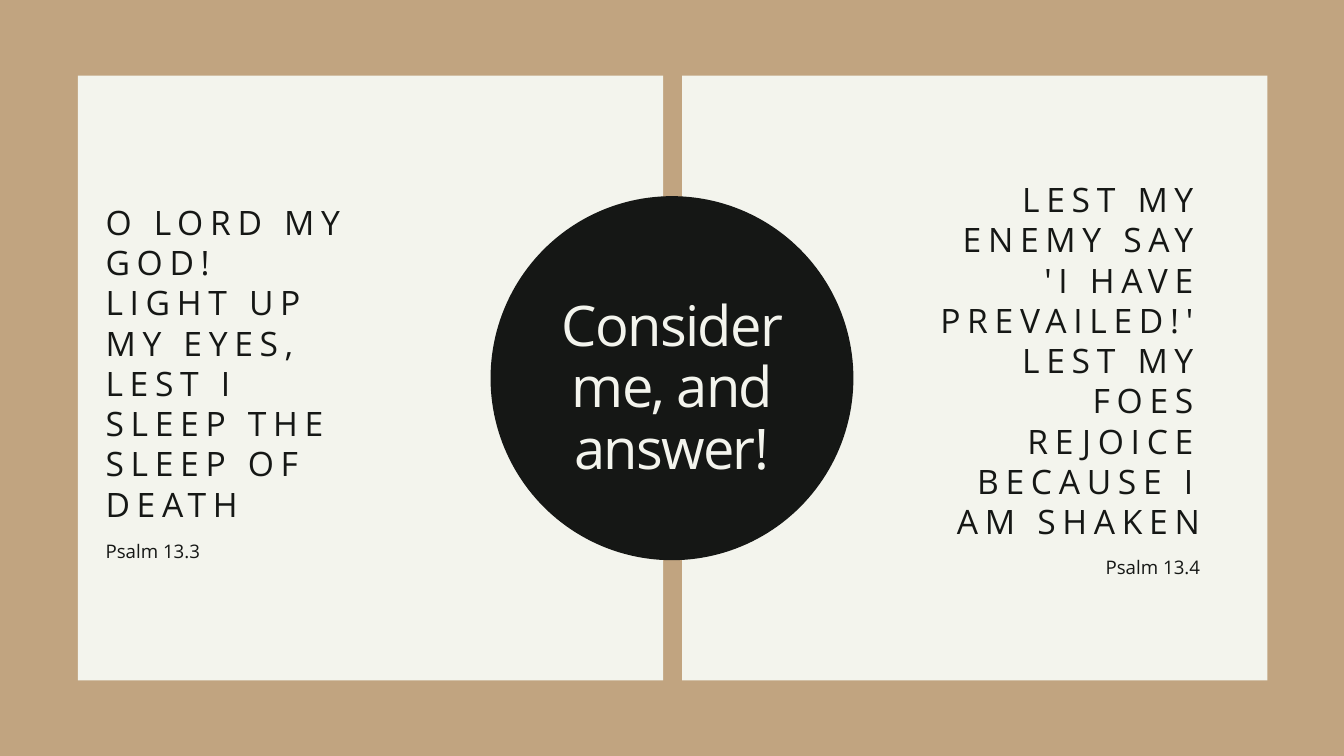
"""Build a two-panel psalm slide with a central circle."""
from pptx import Presentation
from pptx.dml.color import RGBColor
from pptx.enum.shapes import MSO_SHAPE
from pptx.enum.text import MSO_AUTO_SIZE, PP_ALIGN
from pptx.util import Inches, Pt

RECT, OVAL = MSO_SHAPE.RECTANGLE, MSO_SHAPE.OVAL
LEFT, CENTER, RIGHT = PP_ALIGN.LEFT, PP_ALIGN.CENTER, PP_ALIGN.RIGHT
GROW = MSO_AUTO_SIZE.SHAPE_TO_FIT_TEXT
TAN, CREAM, INK = "C1A480", "F3F4ED", "151715"


def paint(fill, color):
    fill.solid()
    fill.fore_color.rgb = RGBColor.from_string(color)


def place(x, y, w, h):
    return [int(v) for v in (x * COL, y * ROW, w * COL, h * ROW)]


prs = Presentation()
prs.slide_width, prs.slide_height = Inches(20), Inches(11.25)
COL, ROW = prs.slide_width / 100, prs.slide_height / 100
s = prs.slides.add_slide(prs.slide_layouts[6])
paint(s.background.fill, TAN)

for kind, color, box in [
    (RECT, CREAM, (5.8, 10, 43.55, 80)),
    (RECT, CREAM, (50.75, 10, 43.55, 80)),
    (OVAL, INK, (36.5, 25.95, 27, 48.15)),
]:
    sp = s.shapes.add_shape(kind, *place(*box))
    sp.shadow.inherit = False
    paint(sp.fill, color)
    sp.line.fill.background()

TITLE = {"size": 60, "leading": 66, "spc": -180, "color": CREAM}
VERSE = {"size": 36, "leading": 43.2, "spc": 720, "color": INK}
SOURCE = {"size": 20, "leading": 28, "spc": 0, "color": INK}
FRAME = {"word_wrap": True, "auto_size": GROW, "margin_left": 0,
         "margin_right": 0, "margin_top": 0, "margin_bottom": 0}

for box, align, style, lines in [
    ((40.2, 39.1, 19.55, 24.6), CENTER, TITLE, ["Consider me, and answer!"]),
    ((69.55, 23.65, 19.75, 47.45), RIGHT, VERSE,
     ["LEST MY ENEMY SAY 'I HAVE PREVAILED!' LEST MY FOES REJOICE BECAUSE I AM SHAKEN"]),
    ((69.55, 73.05, 19.75, 3.3), RIGHT, SOURCE, ["Psalm 13.4"]),
    ((7.85, 26.65, 19.75, 42.2), LEFT, VERSE,
     ["O LORD MY GOD!", "LIGHT UP MY EYES, LEST I SLEEP THE SLEEP OF DEATH"]),
    ((7.85, 70.85, 19.75, 3.3), LEFT, SOURCE, ["Psalm 13.3"]),
]:
    tf = s.shapes.add_textbox(*place(*box)).text_frame
    for name, value in FRAME.items():
        setattr(tf, name, value)
    for i, line in enumerate(lines):
        p = tf.add_paragraph() if i else tf.paragraphs[0]
        p.alignment, p.line_spacing = align, Pt(style["leading"])
        r = p.add_run()
        r.text = line
        r.font.name, r.font.size = "Open Sans", Pt(style["size"])
        paint(r.font.fill, style["color"])
        r.font._element.set("spc", str(style["spc"]))

prs.save("out.pptx")
